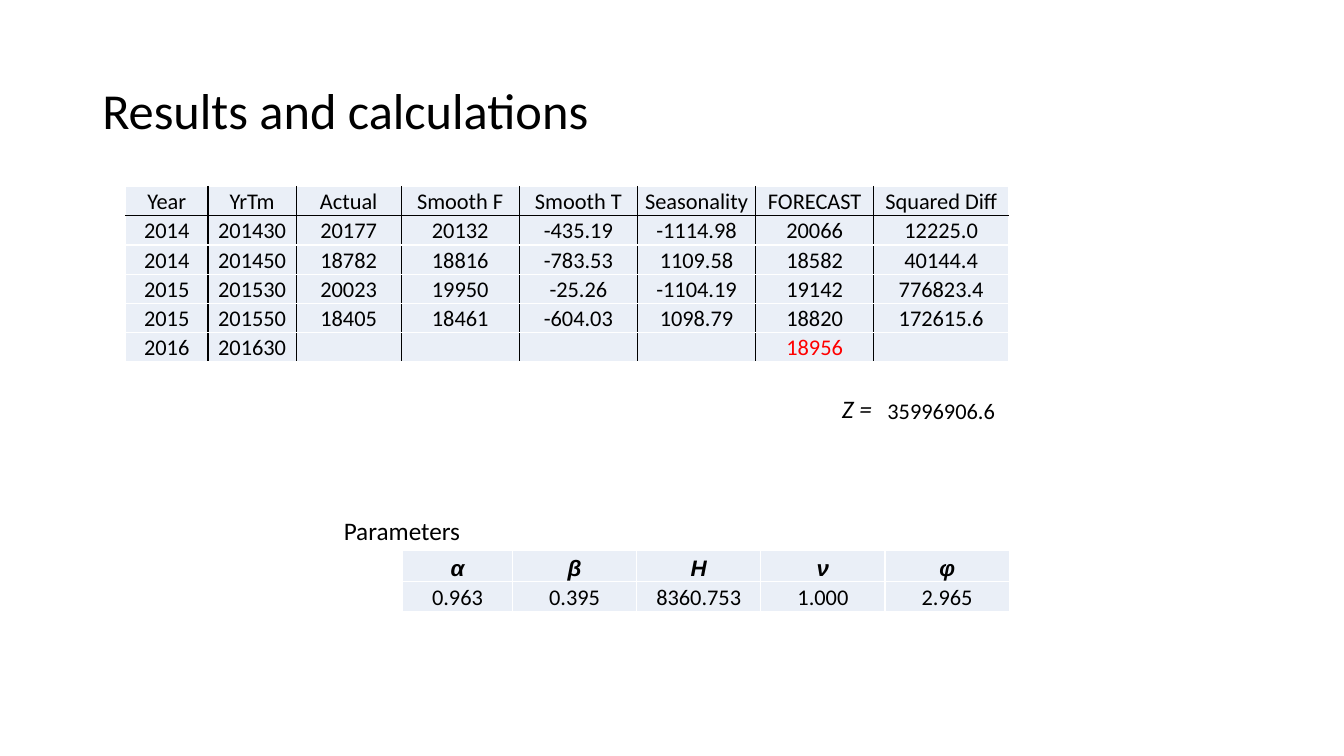
from dataclasses import dataclass
from lxml.etree import SubElement
from pptx import Presentation
from pptx.dml.color import RGBColor as Color
from pptx.enum.text import MSO_ANCHOR as Anchor, PP_ALIGN as Align
from pptx.oxml.ns import qn
from pptx.util import Pt


@dataclass(frozen=True)
class Theme:
    """Colours, fonts and type sizes of the deck."""
    ink: str = "000000"
    paper: str = "FFFFFF"
    tint: str = "EAEFF7"
    alert: str = "FF0000"
    body_font: str = "Calibri"
    symbol_font: str = "Arial"
    title_size: int = 36
    label_size: int = 18
    cell_size: int = 16


THEME = Theme()
RESULTS = [
    ["Year", "YrTm", "Actual", "Smooth F", "Smooth T", "Seasonality", "FORECAST", "Squared Diff"],
    ["2014", "201430", "20177", "20132", "-435.19", "-1114.98", "20066", "12225.0"],
    ["2014", "201450", "18782", "18816", "-783.53", "1109.58", "18582", "40144.4"],
    ["2015", "201530", "20023", "19950", "-25.26", "-1104.19", "19142", "776823.4"],
    ["2015", "201550", "18405", "18461", "-604.03", "1098.79", "18820", "172615.6"],
    ["2016", "201630", "", "", "", "", "18956", ""],
    [""] * 8,
    [""] * 6 + ["Z =", "35996906.6"],
]
RESULT_WIDTHS = [59, 63, 75] + [84.4] * 4 + [96.4]
RESULT_HEIGHTS = [20.9] * 7 + [24.5]
DATA_ROWS = 6
PARAMETERS = [
    ["α", "β", "Η", "ν", "φ"],
    ["0.963", "0.395", "8360.753", "1.000", "2.965"],
]
PARAMETER_WIDTHS = [78.6] + [88.7] * 4
PARAMETER_HEIGHTS = [21.9] * 2


def apply(target, formats):
    """Set every attribute named in a dict of format values."""
    for name, value in formats.items():
        setattr(target, name, value)


def write(para, text, size, color=THEME.ink, **font):
    """Put one formatted span of text in a paragraph."""
    span = para.add_run()
    span.text = text
    apply(span.font, {"name": THEME.body_font, "size": Pt(size), **font})
    span.font.color.rgb = Color.from_string(color)


def add_label(page, box, text, size, **frame):
    """Place a text box at the given box."""
    label = page.shapes.add_textbox(*map(Pt, box)).text_frame
    apply(label, frame)
    write(label.paragraphs[0], text, size)
    return label


def draw_borders(cell, colors):
    """Draw one-point borders from a dict of side and colour."""
    for side in "LRTB":
        line = SubElement(cell._tc.get_or_add_tcPr(), qn(f"a:ln{side}"), w=str(Pt(1)))
        fill = SubElement(line, qn("a:solidFill"))
        SubElement(fill, qn("a:srgbClr"), val=colors.get(side, THEME.paper))


def fill_cell(cell, text, tint=THEME.tint, borders=None, align=Align.CENTER, **font):
    """Format one table cell and write its text."""
    inset = Pt(1.4)
    apply(cell, {"margin_left": inset, "margin_right": inset, "margin_top": inset,
                 "margin_bottom": 0, "vertical_anchor": Anchor.BOTTOM})
    draw_borders(cell, borders or {})
    if tint:
        cell.fill.solid()
        cell.fill.fore_color.rgb = Color.from_string(tint)
    else:
        cell.fill.background()
    para = cell.text_frame.paragraphs[0]
    para.alignment = align
    if text:
        write(para, text, **{"size": THEME.cell_size, **font})
    else:
        SubElement(para._p, qn("a:endParaRPr"), sz=str(THEME.cell_size * 100))


def add_grid(page, left, top, widths, heights):
    """Add an unbanded table with the given column and row sizes."""
    box = left, top, sum(widths), sum(heights)
    grid = page.shapes.add_table(len(heights), len(widths), *map(Pt, box)).table
    apply(grid, {"first_row": False, "horz_banding": False})
    for column, width in zip(grid.columns, widths):
        column.width = Pt(width)
    for row, height in zip(grid.rows, heights):
        row.height = Pt(height)
    return grid


def result_borders(row, column):
    """Return the dark rules around one cell of the results."""
    sides = {"L": column > 0, "R": column < len(RESULT_WIDTHS) - 1,
             "T": row == 1, "B": row == 0}
    return {side: THEME.ink for side, dark in sides.items() if dark and row < DATA_ROWS}


def add_results(page, left, top):
    """Place the forecast table with its Z total."""
    special = {
        "18956": {"color": THEME.alert},
        "Z =": {"size": THEME.label_size, "italic": True, "align": Align.RIGHT},
    }
    grid = add_grid(page, left, top, RESULT_WIDTHS, RESULT_HEIGHTS)
    for row, values in enumerate(RESULTS):
        tint = THEME.tint if row < DATA_ROWS else None
        for column, text in enumerate(values):
            fill_cell(grid.cell(row, column), text, tint,
                      result_borders(row, column), **special.get(text, {}))


def add_parameters(page, left, top):
    """Place the parameter table and the label above its left edge."""
    add_label(page, (left - 49, top - 28.8, 98.6, 28.8), "Parameters",
              THEME.label_size, word_wrap=False)
    symbol = {"name": THEME.symbol_font, "bold": True, "italic": True}
    grid = add_grid(page, left, top, PARAMETER_WIDTHS, PARAMETER_HEIGHTS)
    for row, (values, font) in enumerate(zip(PARAMETERS, (symbol, {}))):
        for column, text in enumerate(values):
            fill_cell(grid.cell(row, column), text, **font)


def main():
    """Build the slide and save the deck."""
    deck = Presentation()
    apply(deck, {"slide_width": Pt(960), "slide_height": Pt(540)})
    page = deck.slides.add_slide(deck.slide_layouts[6])
    title = add_label(page, (66, 28.8, 828, 104.4), "Results and calculations",
                      THEME.title_size, word_wrap=True, vertical_anchor=Anchor.MIDDLE)
    title.paragraphs[0].line_spacing = 0.9
    add_results(page, 89.6, 133.2)
    add_parameters(page, 287.5, 393.2)
    deck.save("out.pptx")


if __name__ == "__main__":
    main()
